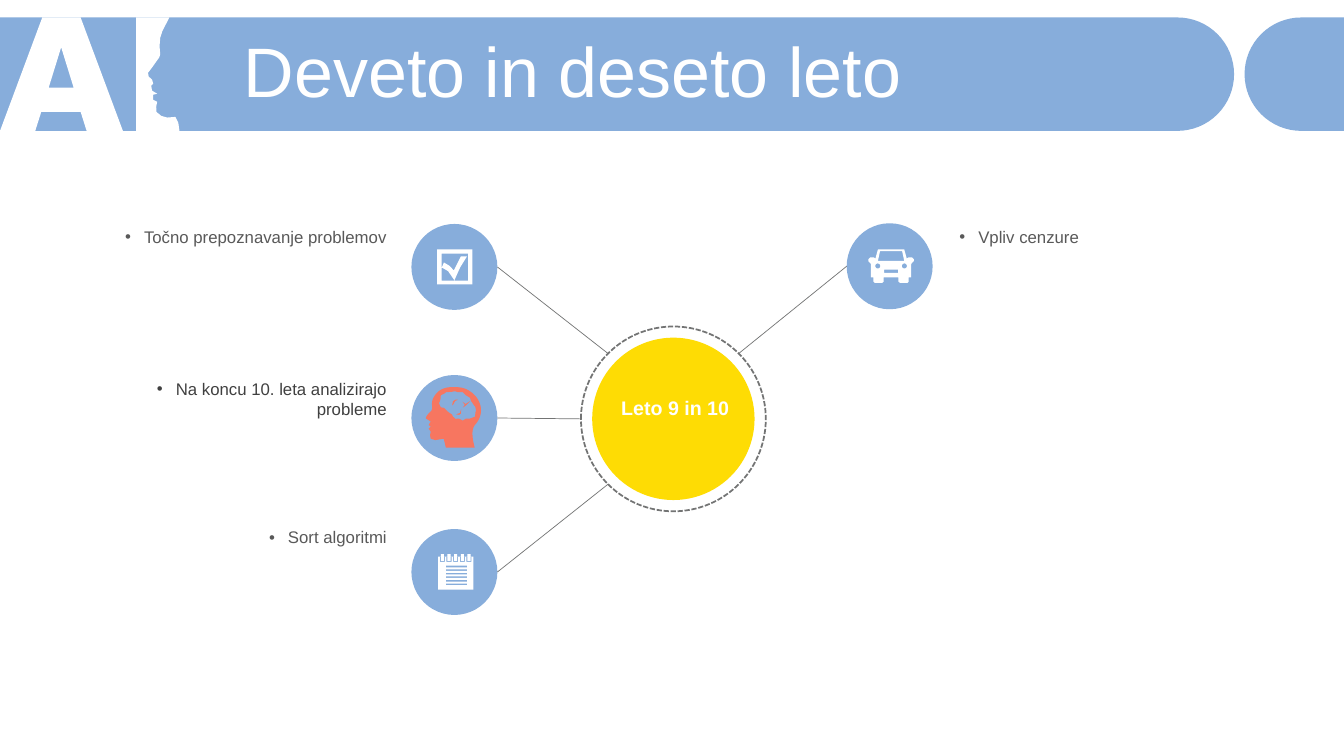
from math import cos, pi, sin

from lxml.etree import SubElement
from pptx import Presentation
from pptx.dml.color import RGBColor
from pptx.enum.dml import MSO_LINE
from pptx.enum.shapes import MSO_CONNECTOR, MSO_SHAPE
from pptx.enum.text import MSO_ANCHOR, MSO_AUTO_SIZE, PP_ALIGN
from pptx.oxml.ns import qn
from pptx.util import Pt

COLORS = {
    "blue": "87ADDB",
    "yellow": "FEDC04",
    "coral": "F77660",
    "white": "FFFFFF",
    "line": "737474",
    "text": "595959",
    "dark text": "404040",
}


def arc(x, y, radius, start=0, stop=2 * pi, steps=32):
    return [(x + radius * cos(start + (stop - start) * i / steps),
             y + radius * sin(start + (stop - start) * i / steps))
            for i in range(steps + 1)]


def curve(p0, p1, p2, p3, steps=20):
    """Points along a cubic Bézier curve."""
    return [tuple((1 - t) ** 3 * a + 3 * t * (1 - t) ** 2 * b
                  + 3 * t * t * (1 - t) * c + t ** 3 * d
                  for a, b, c, d in zip(p0, p1, p2, p3))
            for t in (i / steps for i in range(steps + 1))]


def rectangle(left, top, right, bottom):
    return [(left, top), (right, top), (right, bottom), (left, bottom)]


def mirror(right_half):
    """Close a right-hand outline with its reflection about x = 0."""
    return right_half + [(-x, y) for x, y in reversed(right_half)]


class SlideBuilder:
    def __init__(self, page, font="Arial"):
        self.page, self.font = page, font

    def color(self, name):
        return RGBColor.from_string(COLORS[name])

    def span(self, para, text, size, color, bold=False):
        span = para.add_run()
        span.text = text
        span.font.name, span.font.size, span.font.bold = self.font, Pt(size), bold
        span.font.color.rgb = self.color(color)

    def title(self, text, left, top, width, height):
        box = self.page.shapes.title
        box.left, box.top, box.width, box.height = map(Pt, (left, top, width, height))
        frame = box.text_frame
        frame.auto_size = MSO_AUTO_SIZE.NONE
        frame.vertical_anchor = MSO_ANCHOR.MIDDLE
        para = frame.paragraphs[0]
        para.alignment, para.line_spacing, para.space_before = PP_ALIGN.LEFT, 0.8, Pt(10)
        self.span(para, text, 50, "white")
        box.element.getparent().append(box.element)  # in front of the banner

    def text(self, text, left, top, width, height, align, size=12, color="text",
             bold=False, bullet=False):
        box = self.page.shapes.add_textbox(*map(Pt, (left, top, width, height)))
        frame = box.text_frame
        frame.word_wrap = True
        frame.auto_size = MSO_AUTO_SIZE.SHAPE_TO_FIT_TEXT
        para = frame.paragraphs[0]
        para.alignment = align
        if bullet:
            properties = para._p.get_or_add_pPr()
            properties.set("marL", str(Pt(13.5)))
            properties.set("indent", str(-Pt(13.5)))
            SubElement(properties, qn("a:buFont"), typeface=self.font)
            SubElement(properties, qn("a:buChar"), char="•")
        self.span(para, text, size, color, bold)

    def paint(self, shape, fill):
        shape.shadow.inherit = False
        shape.fill.solid()
        shape.fill.fore_color.rgb = self.color(fill)
        shape.line.fill.background()

    def circle(self, x, y, radius, fill=None):
        """Draw a filled disc, or a dashed ring when no fill is given."""
        shape = self.page.shapes.add_shape(
            MSO_SHAPE.OVAL, *map(Pt, (x - radius, y - radius, 2 * radius, 2 * radius)))
        if fill:
            self.paint(shape, fill)
            return
        shape.shadow.inherit = False
        shape.fill.background()
        shape.line.color.rgb = self.color("line")
        shape.line.width = Pt(1.25)
        shape.line.dash_style = MSO_LINE.SQUARE_DOT

    def outline(self, contours, fill, x=0, y=0):
        """Fill contours placed around (x, y); nested contours become holes."""
        placed = [[(Pt(x + dx), Pt(y + dy)) for dx, dy in contour] for contour in contours]
        builder = self.page.shapes.build_freeform(*placed[0][0])
        for number, points in enumerate(placed):
            if number:
                builder.move_to(*points[0])
            builder.add_line_segments(points[1:], close=True)
        self.paint(builder.convert_to_shape(), fill)

    def line(self, x1, y1, x2, y2):
        line = self.page.shapes.add_connector(
            MSO_CONNECTOR.STRAIGHT, *map(Pt, (x1, y1, x2, y2)))
        line.line.color.rgb = self.color("line")
        line.line.width = Pt(0.5)
        SubElement(line._element.spPr, qn("a:effectLst"))


LETTER_A = [
    [(0, 93.5), (30.2, 12.5), (57.6, 12.5), (87.8, 93.5), (61.9, 93.5),
     (57.6, 79.9), (29.5, 79.9), (25.2, 93.5)],
    [(43.7, 33.8), (34.8, 62.6), (52.6, 62.6)],
]
FACE = [[
    (97.2, 12.5), (121, 12.5), (116, 22.3), (114.5, 27), (114, 33), (114.5, 38.9),
    (113.8, 41), (108.7, 48.2), (105.8, 52), (106.2, 54.7), (108.7, 56.9),
    (109.4, 59.8), (108, 61.2), (108.7, 64.8), (112.3, 67), (109.4, 67.7),
    (109.4, 71.3), (112.3, 72.7), (111.6, 76.3), (111.8, 80), (115.2, 82.8),
    (119.5, 84), (125.3, 83.5), (127.4, 87.8), (128.2, 93.5), (97.2, 93.5),
]]
CHECKBOX = [
    rectangle(-12.3, -12.5, 12.9, 12.5),
    rectangle(-9.2, -9.5, 9.8, 9.7),
    [(-9, 0.4), (-7.5, -3.2), (-3.5, -0.8), (-0.4, 2.5), (4.7, -7.6), (9, -7.6),
     (4, 0.5), (0, 9.5), (-4.5, 3)],
]
CAR = [
    mirror([(0, -12), (9.4, -12), (11.2, -5.5), (12.5, -6.4), (14.8, -6.4),
            (16.2, -5), (16.2, -3.6), (14.8, -2.2), (14.4, -1.5), (14.4, 8),
            (12.6, 8), (12.6, 11), (11.8, 11.8), (6.3, 11.8), (5.3, 11), (5.3, 8)]),
    mirror([(7.9, -10.7), (9.4, -3.8)]),
    rectangle(-5, 2.5, 5, 4.7),
    arc(-9.5, -0.2, 1.8), arc(9.5, -0.2, 1.8),
]
NOTEPAD = [rectangle(-11.6, -11, 13.6, 12.5)]
NOTEPAD += [rectangle(-6.1, -4.5 + 2.55 * i, 9, -3.4 + 2.55 * i) for i in range(6)]
for ring in range(5):
    ring_left = -10.4 + 4.75 * ring
    NOTEPAD += [rectangle(ring_left, -11, ring_left + 3.6, -7.2),
                rectangle(ring_left + 0.7, -12.8, ring_left + 2.9, -8)]
HEAD = [
    curve((1.8, -22), (14, -22), (24.8, -7.6), (15.5, 4))
    + curve((15.5, 4), (12.6, 6.8), (11.9, 11.2), (14.5, 21.2))
    + [(-6.1, 21.2), (-7.6, 14.8), (-13.7, 15.8), (-16.9, 14.8), (-17.4, 12.4),
       (-16.9, 9.7), (-18.4, 7.6), (-16.9, 6.1), (-18.4, 5), (-16.9, 2.5), (-20.3, 0.4)]
    + curve((-20.3, 0.4), (-20.5, -1.1), (-19.1, -2.5), (-16.9, -4.7))
    + curve((-16.9, -4.7), (-14.8, -6.8), (-16.9, -9), (-15.5, -13.3))
    + curve((-15.5, -13.3), (-12.6, -19.8), (-7.6, -22.7), (1.8, -22)),
    [(0.4, -19.1), (-1.8, -18.7), (-6.1, -18.4), (-6.8, -17.6), (-9.7, -16.2),
     (-10, -13.3), (-11, -10.4), (-9.7, -7.6), (-7.4, -7.2), (-4.7, -4.5),
     (-1.8, -2.5), (-1, -1), (0.8, 0.6), (3.2, 0.4), (6.1, 1.9), (8.3, 0.4),
     (11.2, 0.4), (14.8, -1), (15, -4), (15.5, -5.4), (14.8, -8.3), (14, -9),
     (12.6, -11.2), (11.9, -11.9), (11.2, -14.4), (8.3, -16.2), (6.1, -18.4),
     (2.5, -18.4)],
    [(-1.6, -9), (-1, -12), (1, -13.2), (2.5, -13), (0.6, -12.2), (-0.6, -10)],
    [(5.8, -11.6), (8, -10), (11.2, -12), (8.3, -9), (6, -7.4), (7.4, -9.4)],
    [(1.2, -2.6), (4, -3.6), (4.8, -6.5), (4.6, -3.2), (3.4, -2.2)],
]


def main():
    deck = Presentation()
    deck.slide_width, deck.slide_height = Pt(960), Pt(540)
    page = deck.slides.add_slide(deck.slide_layouts[5])
    slide = SlideBuilder(page)

    top, bottom, middle, radius = 12.5, 93.5, 53, 40.5
    slide.outline([[(0, top)] + arc(841, middle, radius, -pi / 2, pi / 2)
                   + [(0, bottom)]], "blue")
    slide.outline([[(960, bottom)] + arc(929.5, middle, radius, pi / 2, 3 * pi / 2)
                   + [(960, top)]], "blue")
    slide.outline(LETTER_A, "white")
    slide.outline(FACE, "white")
    slide.title("Deveto in deseto leto", 167, 26.6, 770, 57)

    hub_x, hub_y, ring_radius, icon_radius = 481, 299.2, 66, 30.7
    diagonal = ring_radius * cos(pi / 4)
    left_x, right_x = 324.6, 635.5
    # icon centre, icon, icon colour, line end on the ring, text, text top, text colour
    topics = [
        (left_x, 190.7, CHECKBOX, "white", -diagonal, -diagonal,
         "Točno prepoznavanje problemov", 158.4, "text"),
        (left_x, 298.6, HEAD, "coral", -ring_radius, 0,
         "Na koncu 10. leta analizirajo probleme", 267.1, "dark text"),
        (left_x, 408.6, NOTEPAD, "white", -diagonal, diagonal,
         "Sort algoritmi", 373, "text"),
        (right_x, 190.2, CAR, "white", diagonal, -diagonal,
         "Vpliv cenzure", 158.4, "text"),
    ]
    slide.circle(hub_x, hub_y, 58, "yellow")
    slide.circle(hub_x, hub_y, ring_radius)
    for x, y, icon, icon_color, end_x, end_y, text, text_top, text_color in topics:
        on_left = x < hub_x
        slide.circle(x, y, icon_radius, "blue")
        slide.line(x + (icon_radius if on_left else -icon_radius), y,
                   hub_x + end_x, hub_y + end_y)
        slide.outline(icon, icon_color, x if on_left else x + 1, y)
        slide.text(text, 68.4 if on_left else 678.2, text_top, 215, 21.8,
                   PP_ALIGN.RIGHT if on_left else PP_ALIGN.LEFT,
                   color=text_color, bullet=True)
    slide.text("Leto 9 in 10", 426.2, 279.4, 112.3, 24.5, PP_ALIGN.CENTER,
               size=14, color="white", bold=True)
    deck.save("out.pptx")


if __name__ == "__main__":
    main()
